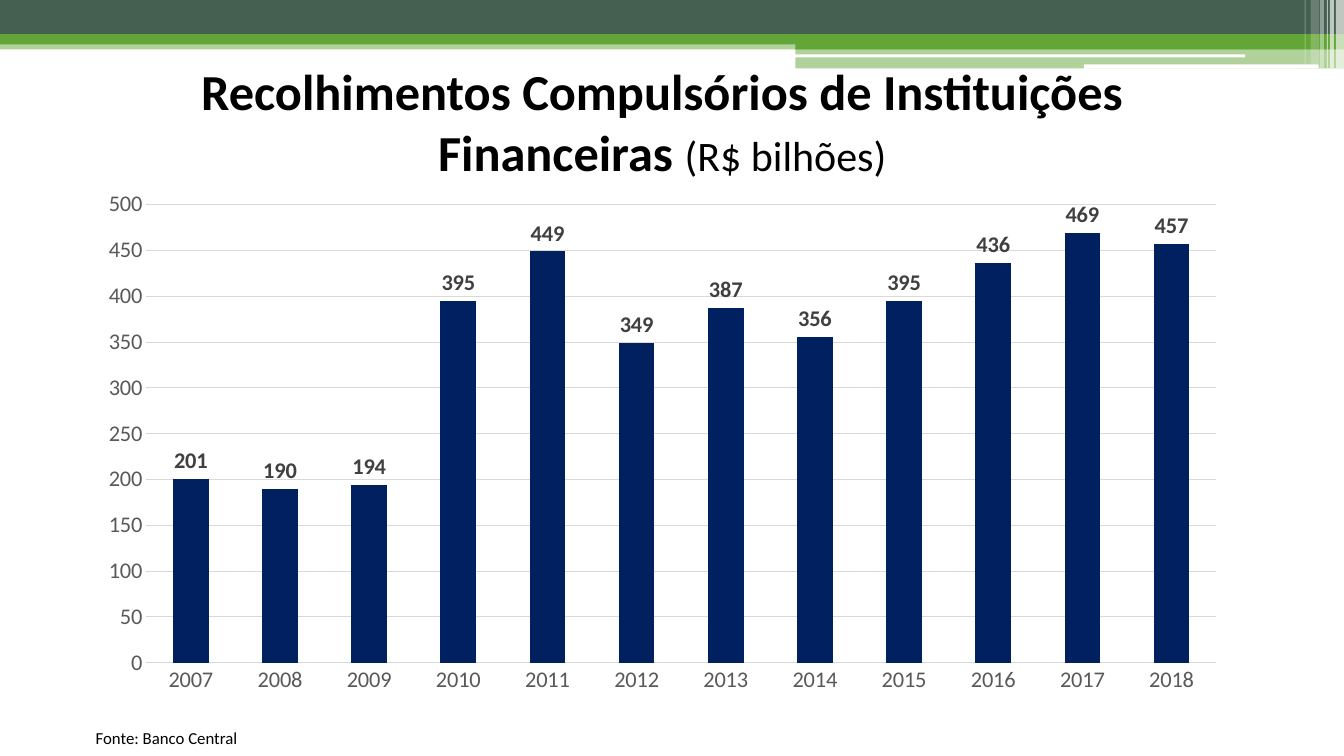
import pptx
import pptx.chart.data
import pptx.dml.color
import pptx.enum.chart
import pptx.enum.shapes
import pptx.enum.text
import pptx.oxml
import pptx.oxml.ns
import pptx.util
from pptx.util import Inches

TITLE = "Recolhimentos Compulsórios de Instituições Financeiras "
UNIT = "(R$ bilhões)"
SOURCE = "Fonte: Banco Central"
DEPOSITS = {
    "2007": 201, "2008": 190, "2009": 194, "2010": 395,
    "2011": 449, "2012": 349, "2013": 387, "2014": 356,
    "2015": 395, "2016": 436, "2017": 469, "2018": 457,
}

THEME = {
    "font": "Calibri",
    "black": "000000", "white": "FFFFFF", "slate": "455F51", "green": "63A537",
    "bar": "002060", "axis": "595959", "grid": "D9D9D9", "label": "404040",
    "title_size": 36, "unit_size": 30, "source_size": 12, "chart_size": 16,
}

SLIDE_WIDTH, SLIDE_HEIGHT = 13.33, 7.5
CONTENT_LEFT, CONTENT_WIDTH = 0.85, 11.44
TITLE_TOP, TITLE_HEIGHT = 0.61, 1.18
CHART_TOP, CHART_HEIGHT = TITLE_TOP + TITLE_HEIGHT, 5.2
STEP_LEFT = 7.89

# left, top, width, height, colour, opacity in percent
BANDS = [
    (0, 0.4, SLIDE_WIDTH, 0.09, "green", 50),
    (0, 0, SLIDE_WIDTH, 0.34, "slate", 100),
    (0, 0.34, SLIDE_WIDTH, 0.1, "green", 100),
    (STEP_LEFT, 0.39, SLIDE_WIDTH - STEP_LEFT, 0.1, "green", 100),
    (STEP_LEFT, 0.48, SLIDE_WIDTH - STEP_LEFT, 0.2, "green", 50),
]
# left, top, width, height
ROUNDED_LINES = [(7.88, 0.54, 4.47, 0.03), (10.75, 0.64, 2.33, 0.04)]
# left, width, height, opacity in percent
STRIPES = [
    (13.25, 0.08, 0.68, 65), (13.19, 0.04, 0.68, 65), (13.16, 0.01, 0.68, 60),
    (13.09, 0.04, 0.68, 40), (13, 0.08, 0.64, 20), (12.94, 0.01, 0.64, 30),
]


def color(name):
    return pptx.dml.color.RGBColor.from_string(THEME[name])


def format_font(font, size, color_name, bold=False):
    font.name = THEME["font"]
    font.size = pptx.util.Pt(THEME[size])
    font.bold = bold
    font.color.rgb = color(color_name)


def add_span(para, text, size, color_name="black", bold=False):
    span = para.add_run()
    span.text = text
    format_font(span.font, size, color_name, bold)


def add_block(page, left, top, width, height, color_name, opacity=100, rounded=False):
    kinds = pptx.enum.shapes.MSO_SHAPE
    kind = kinds.ROUNDED_RECTANGLE if rounded else kinds.RECTANGLE
    block = page.shapes.add_shape(
        kind, Inches(left), Inches(top), Inches(width), Inches(height))
    block.shadow.inherit = False
    block.line.fill.background()
    block.fill.solid()
    block.fill.fore_color.rgb = color(color_name)
    if opacity < 100:
        fill = block.fill._xPr.find(pptx.oxml.ns.qn("a:solidFill"))
        alpha = pptx.oxml.parse_xml(
            f'<a:alpha {pptx.oxml.ns.nsdecls("a")} val="{opacity * 1000}"/>')
        fill[0].append(alpha)


def add_header(page):
    for band in BANDS:
        add_block(page, *band)
    for line in ROUNDED_LINES:
        add_block(page, *line, "white", rounded=True)
    for left, width, height, opacity in STRIPES:
        add_block(page, left, 0, width, height, "white", opacity)


def add_title(page):
    title = page.shapes.title
    title.left, title.top = Inches(CONTENT_LEFT), Inches(TITLE_TOP)
    title.width, title.height = Inches(CONTENT_WIDTH), Inches(TITLE_HEIGHT)
    frame = title.text_frame
    frame.word_wrap = True
    frame.auto_size = pptx.enum.text.MSO_AUTO_SIZE.NONE
    frame.vertical_anchor = pptx.enum.text.MSO_ANCHOR.MIDDLE
    para = frame.paragraphs[0]
    para.alignment = pptx.enum.text.PP_ALIGN.CENTER
    add_span(para, TITLE, "title_size", bold=True)
    add_span(para, UNIT, "unit_size")
    # Placeholder stays above the header bands
    page.shapes._spTree.append(title._element)


def add_source(page):
    box = page.shapes.add_textbox(
        Inches(CONTENT_LEFT), Inches(7.17), Inches(2.58), Inches(0.3))
    box.text_frame.word_wrap = True
    box.text_frame.auto_size = pptx.enum.text.MSO_AUTO_SIZE.SHAPE_TO_FIT_TEXT
    add_span(box.text_frame.paragraphs[0], SOURCE, "source_size")


def format_line(line):
    line.color.rgb = color("grid")
    line.width = pptx.util.Pt(0.75)


def add_deposit_chart(page):
    data = pptx.chart.data.CategoryChartData()
    data.categories = list(DEPOSITS)
    data.add_series("Recolhimentos", list(DEPOSITS.values()))
    chart = page.shapes.add_chart(
        pptx.enum.chart.XL_CHART_TYPE.COLUMN_CLUSTERED,
        Inches(CONTENT_LEFT), Inches(CHART_TOP),
        Inches(CONTENT_WIDTH), Inches(CHART_HEIGHT), data).chart
    chart.has_legend = False
    chart.has_title = False
    format_font(chart.font, "chart_size", "axis")

    for axis in (chart.category_axis, chart.value_axis):
        axis.major_tick_mark = pptx.enum.chart.XL_TICK_MARK.NONE
        axis.minor_tick_mark = pptx.enum.chart.XL_TICK_MARK.NONE
        format_font(axis.tick_labels.font, "chart_size", "axis")
    format_line(chart.category_axis.format.line)
    values = chart.value_axis
    values.minimum_scale, values.maximum_scale, values.major_unit = 0, 500, 50
    values.format.line.fill.background()
    values.has_major_gridlines = True
    format_line(values.major_gridlines.format.line)
    values.tick_labels.number_format = "#,##0"
    values.tick_labels.number_format_is_linked = False

    plot = chart.plots[0]
    plot.gap_width = 150
    plot.vary_by_categories = False
    bars = plot.series[0]
    bars.format.fill.solid()
    bars.format.fill.fore_color.rgb = color("bar")
    labels = bars.data_labels
    labels.show_value = True
    labels.position = pptx.enum.chart.XL_LABEL_POSITION.OUTSIDE_END
    labels.number_format = "#,##0"
    labels.number_format_is_linked = False
    format_font(labels.font, "chart_size", "label", bold=True)


def main():
    deck = pptx.Presentation()
    deck.slide_width, deck.slide_height = Inches(SLIDE_WIDTH), Inches(SLIDE_HEIGHT)
    page = deck.slides.add_slide(deck.slide_layouts.get_by_name("Title Only"))
    add_header(page)
    add_title(page)
    add_source(page)
    add_deposit_chart(page)
    deck.save("out.pptx")


if __name__ == "__main__":
    main()
